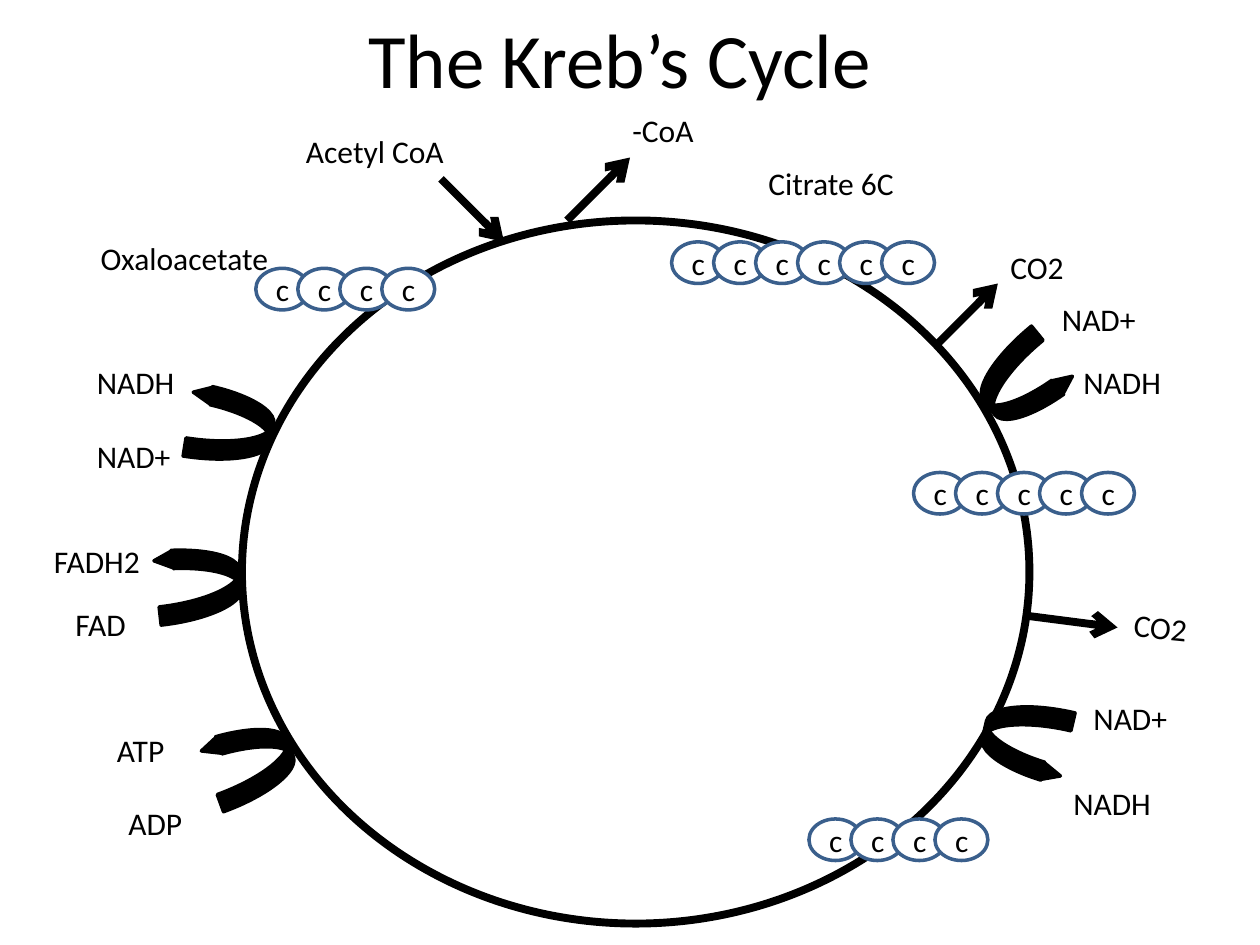
import pptx
import pptx.util
import pptx.dml.color
import pptx.enum.shapes
import pptx.enum.text
import pptx.oxml.ns
from lxml import etree

Inches = pptx.util.Inches
Pt = pptx.util.Pt
SHAPES = pptx.enum.shapes.MSO_SHAPE
BLACK, WHITE, BLUE = "000000", "FFFFFF", "3A5F8C"

TITLE = ("The Kreb’s Cycle", 0.42, -0.17, 9, 1.25)
RING = (1.92, 1.75, 6.25, 5.58)
LABELS = [
    ("Acetyl CoA", 2.33, 1, 2.75, 0),
    ("-CoA", 4.92, 0.83, 1.67, 0),
    ("Citrate 6C", 6, 1.25, 1.67, 0),
    ("CO2", 7.92, 1.92, 1.08, 0),
    ("NAD+", 8.33, 2.33, 1.08, 0),
    ("NADH", 8.5, 2.83, 1.08, 0),
    ("CO2", 8.9, 4.8, 1.08, 5.8),
    ("NAD+", 8.58, 5.5, 1.08, 0),
    ("NADH", 8.42, 6.17, 1.08, 0),
    ("ADP", 0.92, 6.33, 0.75, 0),
    ("ATP", 0.83, 5.75, 0.75, 0),
    ("FAD", 0.5, 4.75, 0.75, 0),
    ("FADH2", 0.33, 4.25, 1, 0),
    ("NAD+", 0.67, 3.42, 1.08, 0),
    ("NADH", 0.67, 2.83, 1.08, 0),
    ("Oxaloacetate", 0.7, 1.85, 2.75, 0),
]
ARROWS = [
    (3.5, 1.42, 4, 1.92),
    (4.5, 1.75, 5, 1.25),
    (7.42, 2.75, 7.92, 2.25),
    (8.17, 4.89, 8.87, 4.98),
]
CURVED_ARROWS = [
    (7.82, 2.69, 50.8),
    (7.85, 5.53, 103.1),
    (1.7, 5.72, 250),
    (1.29, 4.3, 263.6),
    (1.54, 3.05, 279),
]
CARBON_CHAINS = [
    (5.33, 1.92, 6),
    (7.25, 3.75, 5),
    (6.42, 6.5, 4),
    (2.03, 2.13, 4),
]
CARBON_STEP = 1 / 3


def color(value):
    return pptx.dml.color.RGBColor.from_string(value)


def write(shape, text, size, centered):
    frame = shape.text_frame
    frame.word_wrap = True
    para = frame.paragraphs[0]
    para.text = text
    para.font.name = "Calibri"
    para.font.size = Pt(size)
    para.font.color.rgb = color(BLACK)
    if centered:
        para.alignment = pptx.enum.text.PP_ALIGN.CENTER
        frame.vertical_anchor = pptx.enum.text.MSO_ANCHOR.MIDDLE


def add_text(page, text, left, top, width, height, size=18, centered=False):
    box = page.shapes.add_textbox(*map(Inches, (left, top, width, height)))
    write(box, text, size, centered)
    return box


def add_shape(page, kind, place, fill, line, weight):
    shape = page.shapes.add_shape(kind, *map(Inches, place))
    shape.shadow.inherit = False
    if fill:
        shape.fill.solid()
        shape.fill.fore_color.rgb = color(fill)
    else:
        shape.fill.background()
    shape.line.color.rgb = color(line)
    shape.line.width = Pt(weight)
    return shape


def add_arrow(page, ends):
    arrow = page.shapes.add_connector(
        pptx.enum.shapes.MSO_CONNECTOR.STRAIGHT, *map(Inches, ends))
    arrow.line.color.rgb = color(BLACK)
    arrow.line.width = Pt(4.5)
    qn = pptx.oxml.ns.qn
    etree.SubElement(arrow.line._get_or_add_ln(), qn("a:tailEnd"), type="arrow")
    etree.SubElement(arrow._element.spPr, qn("a:effectLst"))


def main():
    deck = pptx.Presentation()
    deck.slide_width, deck.slide_height = Inches(10), Inches(7.5)
    page = deck.slides.add_slide(deck.slide_layouts[6])

    add_text(page, *TITLE, size=44, centered=True)
    add_shape(page, SHAPES.OVAL, RING, None, BLACK, 4.5)
    for ends in ARROWS:
        add_arrow(page, ends)
    for left, top, angle in CURVED_ARROWS:
        curve = add_shape(page, SHAPES.CURVED_UP_ARROW, (left, top, 0.58, 0.67), BLACK, BLACK, 2)
        curve.rotation = angle
        for index, value in enumerate((0.25, 0.23, 0.25)):
            curve.adjustments[index] = value
    for left, top, count in CARBON_CHAINS:
        for index in range(count):
            place = (left + index * CARBON_STEP, top, 0.42, 0.33)
            carbon = add_shape(page, SHAPES.OVAL, place, WHITE, BLUE, 2)
            write(carbon, "c", 18, True)
    for text, left, top, width, angle in LABELS:
        add_text(page, text, left, top, width, 0.4).rotation = angle

    deck.save("out.pptx")


if __name__ == "__main__":
    main()
